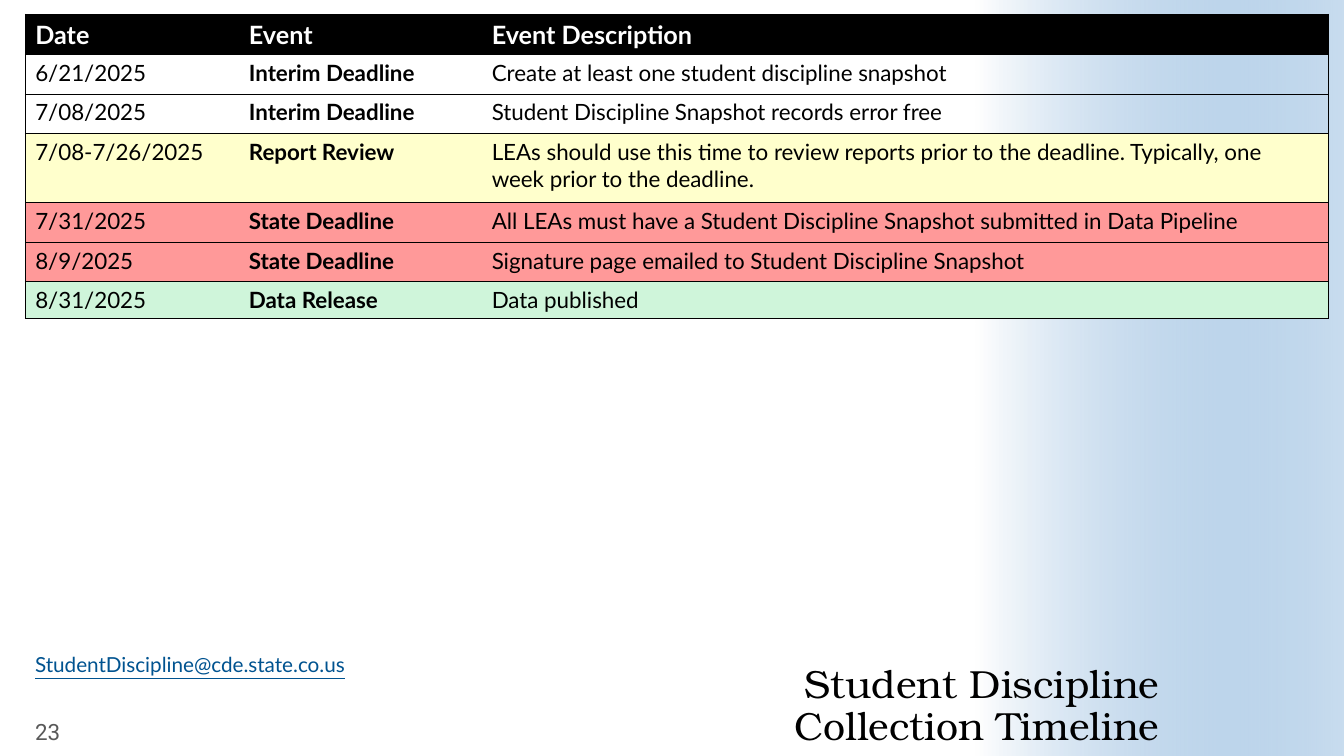
import pptx
import pptx.dml.color
import pptx.enum.shapes
import pptx.enum.text
import pptx.oxml
import pptx.oxml.ns
import pptx.util
from lxml import etree

Pt = pptx.util.Pt
ALIGN = pptx.enum.text.PP_ALIGN
ANCHOR = pptx.enum.text.MSO_ANCHOR
BLACK = "000000"
COLUMNS = [152.6, 173.5, 604.8]
HEIGHTS = [28.8, 28.2, 28.2, 49.4, 28.2, 28.2, 26.4]
ROWS = [
    (BLACK, "Date", "Event", "Event Description"),
    (None, "6/21/2025", "Interim Deadline",
     "Create at least one student discipline snapshot"),
    (None, "7/08/2025", "Interim Deadline",
     "Student Discipline Snapshot records error free"),
    ("FFFFCC", "7/08-7/26/2025", "Report Review",
     "LEAs should use this time to review reports prior to the deadline. "
     "Typically, one week prior to the deadline."),
    ("FF9999", "7/31/2025", "State Deadline",
     "All LEAs must have a Student Discipline Snapshot submitted in Data Pipeline"),
    ("FF9999", "8/9/2025", "State Deadline",
     "Signature page emailed to Student Discipline Snapshot"),
    ("CFF5DA", "8/31/2025", "Data Release", "Data published"),
]


def rgb(value):
    return pptx.dml.color.RGBColor.from_string(value)


def style(tf, font, size, color, bold=False, underline=False):
    for p in tf.paragraphs:
        for r in p.runs:
            r.font.name = font
            r.font.size = Pt(size)
            r.font.color.rgb = rgb(color)
            r.font.bold = bold
            r.font.underline = underline


def add_text(s, box, text, font, size, color, anchor=ANCHOR.TOP,
             align=ALIGN.LEFT, spacing=1.0, inset=(7.2, 3.6), underline=False):
    tf = s.shapes.add_textbox(*map(Pt, box)).text_frame
    tf.word_wrap = True
    tf.vertical_anchor = anchor
    tf.margin_left = tf.margin_right = Pt(inset[0])
    tf.margin_top = tf.margin_bottom = Pt(inset[1])
    tf.text = text
    tf.paragraphs[0].alignment = align
    tf.paragraphs[0].line_spacing = spacing
    style(tf, font, size, color, underline=underline)


def add_gradient_band(s, box, start, end, opacity):
    sp = s.shapes.add_shape(pptx.enum.shapes.MSO_SHAPE.RECTANGLE, *map(Pt, box))
    sp.shadow.inherit = False
    sp.line.fill.background()
    sp.fill.gradient()
    sp.fill.gradient_angle = 0
    stops = sp.fill.gradient_stops
    for stop, position, color in zip(stops, (0, 1), (start, end)):
        stop.position = position
        stop.color.rgb = rgb(color)
    last = sp.fill._fill._gradFill.findall(".//" + pptx.oxml.ns.qn("a:srgbClr"))[-1]
    alpha = etree.SubElement(last, pptx.oxml.ns.qn("a:alpha"))
    alpha.set("val", str(opacity * 1000))


def set_borders(cell, drawn):
    tc_pr = cell._tc.get_or_add_tcPr()
    for i, side in enumerate(("lnL", "lnR", "lnT", "lnB")):
        fill = (f'<a:solidFill><a:srgbClr val="{BLACK}"/></a:solidFill>'
                if side in drawn else "<a:noFill/>")
        tc_pr.insert(i, pptx.oxml.parse_xml(
            f'<a:{side} {pptx.oxml.ns.nsdecls("a")} w="{Pt(0.5)}">{fill}</a:{side}>'))


def add_timeline(s, left, top):
    table = s.shapes.add_table(len(ROWS), len(COLUMNS), Pt(left), Pt(top),
                               Pt(sum(COLUMNS)), Pt(sum(HEIGHTS))).table
    table.horz_banding = False
    for column, width in zip(table.columns, COLUMNS):
        column.width = Pt(width)
    for i, (fill, *texts) in enumerate(ROWS):
        table.rows[i].height = Pt(HEIGHTS[i])
        header = i == 0
        for j, text in enumerate(texts):
            cell = table.cell(i, j)
            cell.text_frame.text = text
            style(cell.text_frame, "Lato", 18 if header else 16,
                  "FFFFFF" if header else BLACK, bold=header or j == 1)
            if fill:
                cell.fill.solid()
                cell.fill.fore_color.rgb = rgb(fill)
            else:
                cell.fill.background()
            outer = {0: ["lnL"], len(texts) - 1: ["lnR"]}.get(j, [])
            set_borders(cell, ["lnT", "lnB"] + outer)


def main():
    prs = pptx.Presentation()
    prs.slide_width, prs.slide_height = Pt(960), Pt(540)
    s = prs.slides.add_slide(prs.slide_layouts[6])
    add_gradient_band(s, (696.5, 0, 263.5, 540), "FFFFFF", "488BC9", 30)
    add_text(s, (306.7, 464.4, 521.3, 70.6), "Student Discipline\vCollection Timeline",
             "TeX Gyre Bonum", 28, BLACK, ANCHOR.BOTTOM, ALIGN.RIGHT, 0.9, (0, 0))
    add_text(s, (18, 511.2, 61.2, 22.3), "23", "Roboto", 16, "595959", ANCHOR.MIDDLE)
    add_text(s, (18, 465.8, 280, 22.3), "StudentDiscipline@cde.state.co.us",
             "Lato", 14.8, "005390", spacing=0.8, underline=True)
    add_timeline(s, 18, 10.1)
    prs.save("out.pptx")


if __name__ == "__main__":
    main()
